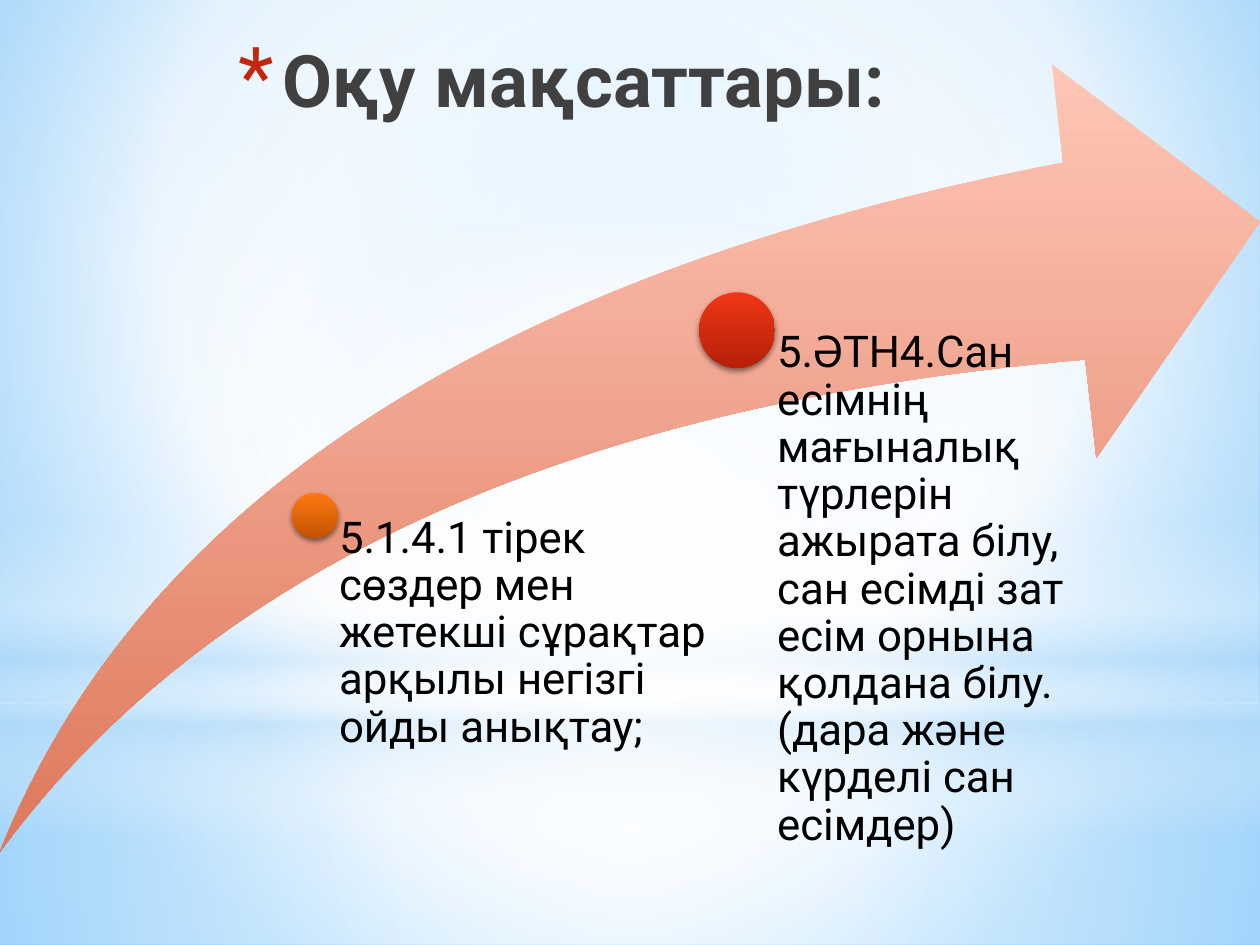
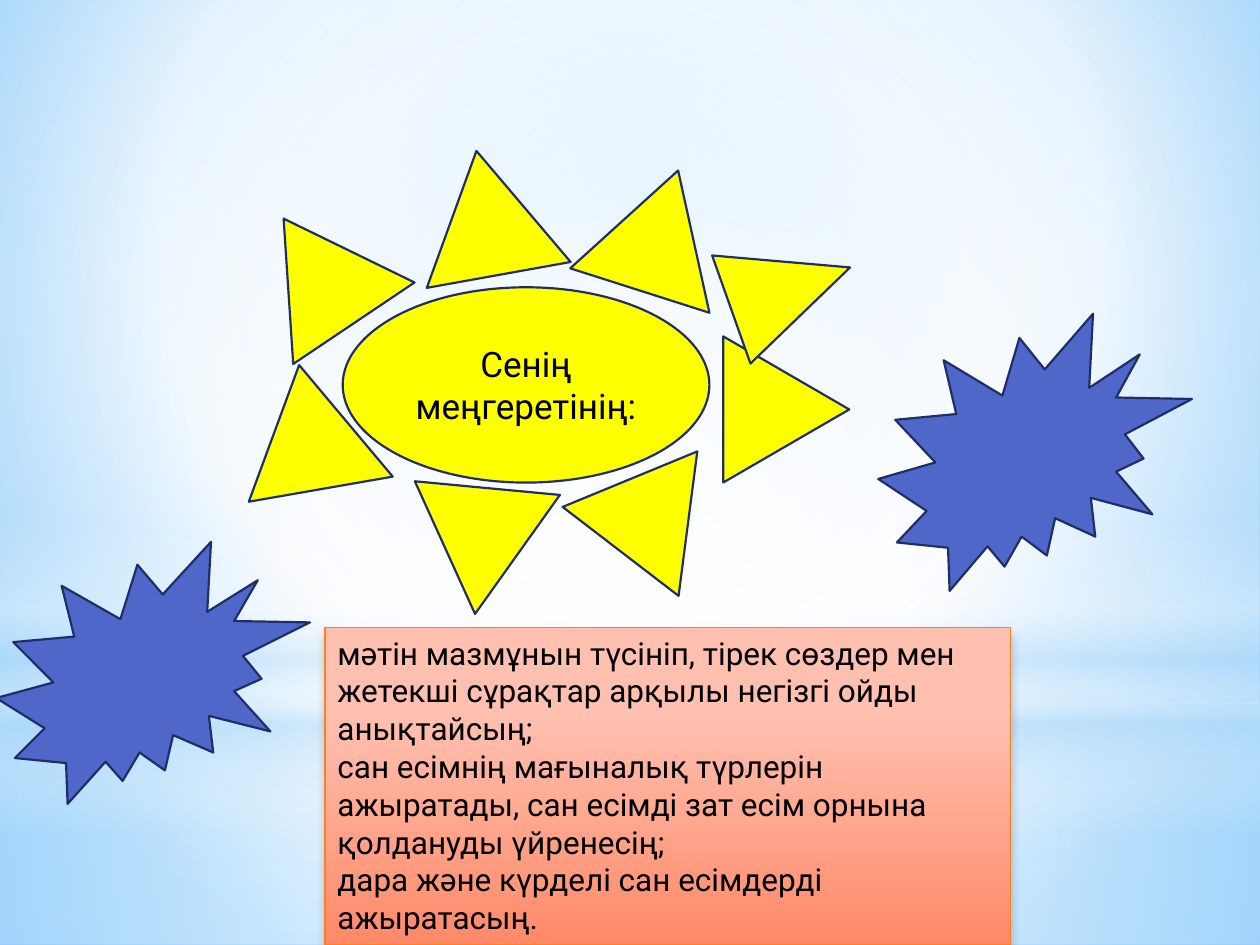
from lxml import etree
from pptx import Presentation
from pptx.dml.color import RGBColor
from pptx.enum.shapes import MSO_SHAPE as Kind
from pptx.enum.text import MSO_ANCHOR as Anchor, PP_ALIGN as Align
from pptx.oxml.ns import nsdecls, qn
from pptx.util import Inches, Pt

WIDTH, HEIGHT = 10, 7.5
FONT = "Roboto"
COLORS = {
    "white": "FFFFFF", "mist": "B4DCFA", "sky": "9ED5FF", "azure": "5BB9FF",
    "text": "000000", "title": "404040", "bullet": "C3260C",
    "yellow": "FFFF00", "navy": "1F2E69", "blue": "4E67C8", "orange": "FF8021",
    "peach": "FFC6B6", "brick": "DD785B",
    "amber": "FF7813", "rust": "C45400", "red": "F03617", "crimson": "B52007",
    "blush": "FFC0AF", "coral": "FF8968",
}

CENTER = (50, 50, 50, 50)
BACKDROP = {"stops": [(0, "sky", 100), (60, "white", 100), (100, "azure", 100)],
            "focus": (20, 10, 20, 60)}
HORIZON = 5.58
BANDS = [
    (Kind.RECTANGLE, (0, HORIZON, WIDTH, HEIGHT - HORIZON),
     {"stops": [(0, "white", 91), (37, "white", 76), (100, "mist", 79)], "focus": CENTER}),
    (Kind.RECTANGLE, (0, 0, WIDTH, HORIZON),
     {"stops": [(0, "white", 89), (48, "white", 62), (100, "mist", 79)], "focus": CENTER}),
    (Kind.RECTANGLE, (0, 4.12, WIDTH, 2.5),
     {"stops": [(0, "white", 0), (29, "white", 30), (45, "mist", 40),
                (55, "white", 26), (65, "mist", 60), (100, "white", 0)]}),
    (Kind.OVAL, (0, 1.75, WIDTH, HORIZON),
     {"stops": [(0, "white", 100), (56, "white", 0)], "focus": CENTER}),
]

TITLE = "Оқу мақсаттары:"
ARROW_BOX = (0, 0.51, WIDTH, 6.25)
GOAL_WIDTH = 3.25
GOALS = [
    {"center": (2.5, 4.09), "radius": 0.18, "right_inset": 0, "colors": ("amber", "rust"),
     "text": "5.1.4.1 тірек сөздер мен жетекші сұрақтар арқылы негізгі ойды анықтау;"},
    {"center": (5.85, 2.62), "radius": 0.3, "right_inset": 0.2, "colors": ("red", "crimson"),
     "text": "5.ӘТН4.Сан есімнің мағыналық түрлерін ажырата білу, сан есімді зат есім "
             "орнына қолдана білу. (дара және күрделі сан есімдер)"},
]

SUN_TEXT = "Сенің меңгеретінің:"
SUN_BOX = (2.72, 2.28, 2.91, 1.55)
RAY_HEIGHT = 1
RAYS = [
    (3.29, 1.19, 1.16, 349.8), (3.12, 3.61, 1.16, 305.5),
    (1.88, 2.89, 1.16, 350.1), (1.95, 1.65, 1.16, 326.1),
    (4.65, 1.33, 1.16, 17.7), (5.66, 2.75, 1.16, 90),
    (4.65, 3.48, 1.16, 37.5), (5.82, 1.79, 0.91, 70.5),
]
BURSTS = [(6.97, 2.49, 2.49, 2.2), (-0.03, 4.3, 2.49, 2.08)]
OUTCOME_BOX = (2.58, 4.98, 5.44, 2.52)
OUTCOMES = [
    "мәтін мазмұнын түсініп, тірек сөздер мен жетекші сұрақтар арқылы негізгі ойды анықтайсың;",
    "сан есімнің мағыналық түрлерін ажыратады, сан есімді зат есім орнына қолдануды үйренесің;",
    "дара және күрделі сан есімдерді ажыратасың.",
]
OUTLINE = ("navy", 1.25)


def rgb(name):
    return RGBColor.from_string(COLORS[name])


def fade(top, bottom, start=0):
    return {"stops": [(start, top, 100), (100, bottom, 100)]}


def paint(fill, holder, look):
    fill.solid()
    if isinstance(look, str):
        fill.fore_color.rgb = rgb(look)
        return
    stops = "".join(
        f'<a:gs pos="{pos * 1000}"><a:srgbClr val="{COLORS[name]}">'
        f'<a:alpha val="{alpha * 1000}"/></a:srgbClr></a:gs>'
        for pos, name, alpha in look["stops"])
    if "focus" in look:
        sides = " ".join(f'{side}="{share * 1000}"' for side, share in zip("ltrb", look["focus"]))
        course = f'<a:path path="circle"><a:fillToRect {sides}/></a:path>'
    else:
        course = '<a:lin ang="5400000" scaled="0"/>'
    gradient = etree.fromstring(
        f'<a:gradFill {nsdecls("a")} rotWithShape="1"><a:gsLst>{stops}</a:gsLst>{course}</a:gradFill>')
    holder.replace(holder.find(qn("a:solidFill")), gradient)


def add_figure(page, kind, box, look, line=None, turn=0, shadow=None):
    figure = page.shapes.add_shape(kind, *map(Inches, box))
    properties = figure.element.spPr
    paint(figure.fill, properties, look)
    if line:
        figure.line.color.rgb = rgb(line[0])
        figure.line.width = Pt(line[1])
    else:
        figure.line.fill.background()
    figure.rotation = turn
    figure.shadow.inherit = False
    if shadow:
        alpha, blur, distance = shadow
        properties.find(qn("a:effectLst")).append(etree.fromstring(
            f'<a:outerShdw {nsdecls("a")} blurRad="{Pt(blur)}" dist="{Pt(distance)}" dir="5400000" '
            f'rotWithShape="0"><a:srgbClr val="000000"><a:alpha val="{alpha * 1000}"/>'
            '</a:srgbClr></a:outerShdw>'))
    return figure


def write(box, texts, size, color="text", bold=False, para_format=None, **frame_format):
    frame = box.text_frame
    for name, value in {"word_wrap": True, "vertical_anchor": Anchor.TOP, **frame_format}.items():
        setattr(frame, name, value)
    for index, text in enumerate(texts):
        para = frame.add_paragraph() if index else frame.paragraphs[0]
        for name, value in {"alignment": Align.LEFT, **(para_format or {})}.items():
            setattr(para, name, value)
        span = para.add_run()
        span.text = text
        for name, value in {"name": FONT, "size": Pt(size), "bold": bold}.items():
            setattr(span.font, name, value)
        span.font.color.rgb = rgb(color)


def add_bullet(para, char, color, percent, indent):
    properties = para._p.get_or_add_pPr()
    properties.set("marL", str(Inches(indent)))
    properties.set("indent", str(-Inches(indent)))
    for part in (f'<a:buClr {nsdecls("a")}><a:srgbClr val="{COLORS[color]}"/></a:buClr>',
                 f'<a:buSzPct {nsdecls("a")} val="{percent * 1000}"/>',
                 f'<a:buFont {nsdecls("a")} typeface="{FONT}"/>',
                 f'<a:buChar {nsdecls("a")} char="{char}"/>'):
        properties.append(etree.fromstring(part))


def add_page(deck):
    page = deck.slides.add_slide(deck.slide_layouts[6])
    for kind, box, look in BANDS:
        add_figure(page, kind, box, look)
    return page


def build_goals(page):
    arrow = add_figure(page, Kind.SWOOSH_ARROW, ARROW_BOX, fade("peach", "brick"))
    for index in range(2):
        arrow.adjustments[index] = 0.25
    bottom = ARROW_BOX[1] + ARROW_BOX[3]
    for goal in GOALS:
        (x, y), radius = goal["center"], goal["radius"]
        add_figure(page, Kind.OVAL, (x - radius, y - radius, 2 * radius, 2 * radius),
                   fade(*goal["colors"]), shadow=(45, 3.1, 1.8))
        box = page.shapes.add_textbox(*map(Inches, (x, y, GOAL_WIDTH, bottom - y)))
        write(box, [goal["text"]], 25, para_format={"line_spacing": 0.9},
              margin_left=Inches(radius * 1.06), margin_top=0,
              margin_right=Inches(goal["right_inset"]), margin_bottom=0)
    title = page.shapes.add_textbox(*map(Inches, (0, 0.23, 7.12, 1.25)))
    write(title, [TITLE], 41.4, "title", True, {"alignment": Align.RIGHT})
    add_bullet(title.text_frame.paragraphs[0], "*", "bullet", 114, 0.35)


def build_sun(page):
    sun = add_figure(page, Kind.OVAL, SUN_BOX, "yellow", OUTLINE)
    write(sun, [SUN_TEXT], 20, para_format={"alignment": Align.CENTER},
          vertical_anchor=Anchor.MIDDLE)
    for left, top, width, turn in RAYS:
        add_figure(page, Kind.ISOSCELES_TRIANGLE, (left, top, width, RAY_HEIGHT),
                   "yellow", OUTLINE, turn)
    for box in BURSTS:
        add_figure(page, Kind.EXPLOSION2, box, "blue", OUTLINE)
    outcome = add_figure(page, Kind.RECTANGLE, OUTCOME_BOX, fade("blush", "coral", 28),
                         ("orange", 0.75), shadow=(20, 5, 4))
    write(outcome, OUTCOMES, 18)


def main():
    deck = Presentation()
    deck.slide_width, deck.slide_height = Inches(WIDTH), Inches(HEIGHT)
    master = deck.slide_master
    fill = master.background.fill
    fill.solid()
    paint(fill, master.element.find(f'.//{qn("p:bgPr")}'), BACKDROP)
    for build in (build_goals, build_sun):
        build(add_page(deck))
    deck.save("out.pptx")


if __name__ == "__main__":
    main()
